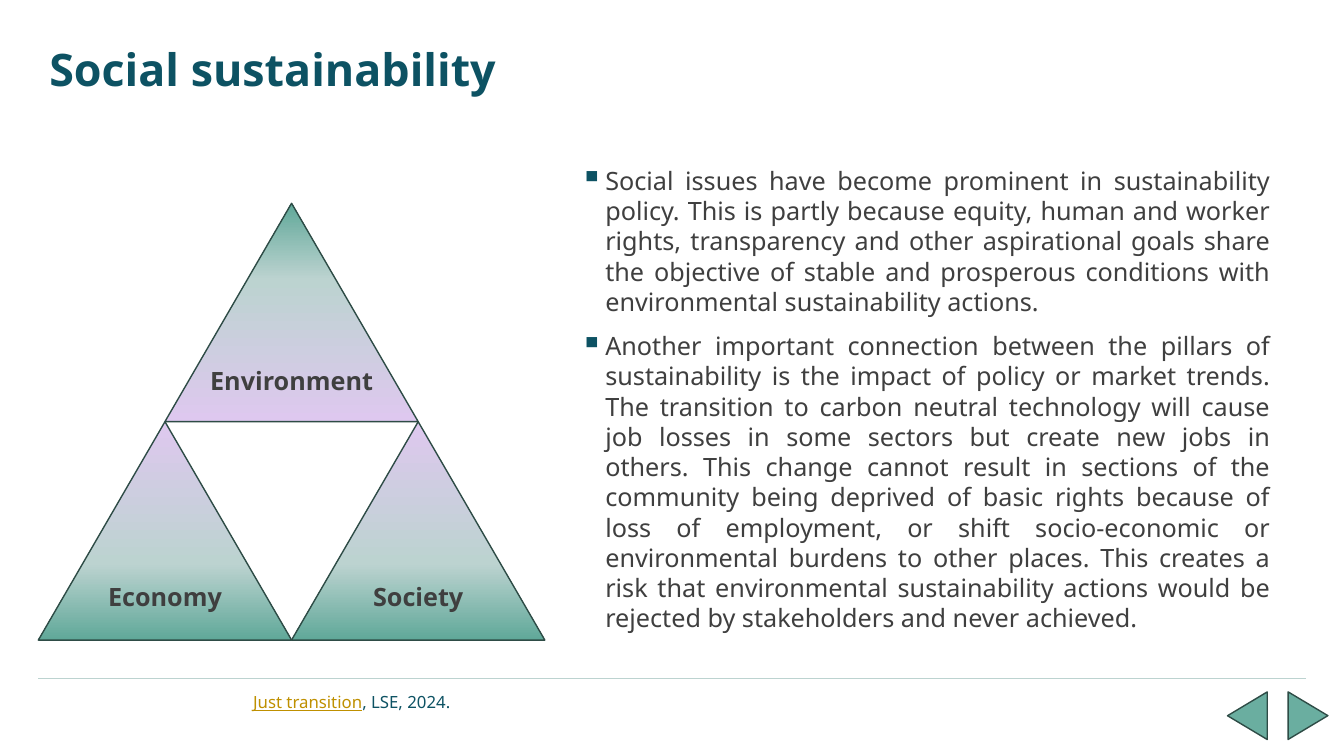
from copy import deepcopy

from lxml import etree
from pptx import Presentation
from pptx.dml.color import RGBColor
from pptx.enum.shapes import MSO_CONNECTOR, MSO_SHAPE
from pptx.enum.text import MSO_ANCHOR, MSO_AUTO_SIZE, PP_ALIGN
from pptx.oxml.ns import qn
from pptx.util import Pt

TRIANGLE = MSO_SHAPE.ISOSCELES_TRIANGLE
STRAIGHT = MSO_CONNECTOR.STRAIGHT
TOP = MSO_ANCHOR.TOP
NO_AUTOFIT = MSO_AUTO_SIZE.NONE
LEFT, CENTER, JUSTIFY = PP_ALIGN.LEFT, PP_ALIGN.CENTER, PP_ALIGN.JUSTIFY

FONT = "Noto Sans"
COLORS = {
    "heading": "0D5263",
    "body": "3F3F3F",
    "link": "BF9000",
    "rule": "BCD3D0",
    "outline": "2E4C46",
    "arrow": "6AAEA0",
}
PILLAR_STOPS = [(0, "DEC8EF"), (0.65, "BCD3D0"), (1, "60A899")]

POINTS = [
    "Social issues have become prominent in sustainability policy. This is partly "
    "because equity, human and worker rights, transparency and other aspirational "
    "goals share the objective of stable and prosperous conditions with "
    "environmental sustainability actions.",
    "Another important connection between the pillars of sustainability is the "
    "impact of policy or market trends. The transition to carbon neutral technology "
    "will cause job losses in some sectors but create new jobs in others. This "
    "change cannot result in sections of the community being deprived of basic "
    "rights because of loss of employment, or shift socio-economic or environmental "
    "burdens to other places. This creates a risk that environmental sustainability "
    "actions would be rejected by stakeholders and never achieved.",
]


def rgb(name):
    return RGBColor.from_string(COLORS[name])


class SlideBuilder:
    def __init__(self, slide):
        self.slide = slide
        self.shapes = slide.shapes

    def style(self, font, size, color, bold=False):
        font.name, font.size, font.bold = FONT, Pt(size), bold
        font.color.rgb = rgb(color)

    def title(self, text, left, top, width, height):
        heading = self.shapes.title
        heading.left, heading.top = Pt(left), Pt(top)
        heading.width, heading.height = Pt(width), Pt(height)
        frame = heading.text_frame
        frame.text = text
        frame.vertical_anchor, frame.auto_size = TOP, NO_AUTOFIT
        line = frame.paragraphs[0]
        line.alignment, line.line_spacing = LEFT, 0.95
        self.style(line.font, 32, "heading", bold=True)

    def frame(self, left, top, width, height):
        box = self.shapes.add_textbox(Pt(left), Pt(top), Pt(width), Pt(height))
        box.text_frame.word_wrap = True
        return box.text_frame

    def label(self, text, left, top, width, height):
        line = self.frame(left, top, width, height).paragraphs[0]
        line.text = text
        line.alignment = CENTER
        self.style(line.font, 18, "body", bold=True)

    def bullets(self, points, left, top, width, height):
        frame = self.frame(left, top, width, height)
        for index, point in enumerate(points):
            item = frame.paragraphs[0] if index == 0 else frame.add_paragraph()
            item.text = point
            item.alignment = JUSTIFY
            if index:
                item.space_before = Pt(10)
            self.add_bullet(item)
            self.style(item.font, 18, "body")

    def add_bullet(self, item):
        properties = item._p.get_or_add_pPr()
        properties.set("marL", str(Pt(18)))
        properties.set("indent", str(-Pt(18)))
        color = etree.SubElement(properties, qn("a:buClr"))
        etree.SubElement(color, qn("a:srgbClr"), val=COLORS["heading"])
        etree.SubElement(properties, qn("a:buSzPct"), val="125000")
        etree.SubElement(properties, qn("a:buChar"), char="▪")

    def citation(self, source, details, left, top, width, height):
        line = self.frame(left, top, width, height).paragraphs[0]
        for text, color in ((source, "link"), (details, "heading")):
            run = line.add_run()
            run.text = text
            self.style(run.font, 12, color)
            run.font.underline = color == "link"

    def triangle(self, left, top, width, height):
        shape = self.shapes.add_shape(TRIANGLE, Pt(left), Pt(top), Pt(width), Pt(height))
        shape.shadow.inherit = False
        shape.line.color.rgb = rgb("outline")
        shape.line.width = Pt(1)
        return shape

    def pillar(self, left, top, width, height, angle):
        """Draw a gradient triangle; angle runs counter-clockwise."""
        fill = self.triangle(left, top, width, height).fill
        fill.gradient()
        fill.gradient_angle = angle
        first = fill.gradient_stops[0]._gs
        first.addnext(deepcopy(first))
        for stop, (position, color) in zip(fill.gradient_stops, PILLAR_STOPS):
            stop.position = position
            stop.color.rgb = RGBColor.from_string(color)

    def arrow(self, left, top, width, height, rotation):
        shape = self.triangle(left, top, width, height)
        shape.rotation = rotation
        shape.fill.solid()
        shape.fill.fore_color.rgb = rgb("arrow")

    def rule(self, left, right, y):
        line = self.shapes.add_connector(STRAIGHT, Pt(left), Pt(y), Pt(right), Pt(y))
        line.line.color.rgb = rgb("rule")
        line.line.width = Pt(1.1)
        etree.SubElement(line._element.spPr, qn("a:effectLst"))


def main():
    deck = Presentation()
    deck.slide_width, deck.slide_height = Pt(960), Pt(540)
    page = SlideBuilder(deck.slides.add_slide(deck.slide_layouts[5]))

    page.rule(27.4, 932.6, 484.7)
    page.title("Social sustainability", 28, 28.8, 763, 84)
    page.bullets(POINTS, 407.3, 114.5, 507, 343)

    side, height = 180.9, 156
    left, top = 27.4, 145.2
    pillars = [
        ("Society", 1, 1, 270, 110.8),
        ("Economy", 0, 1, 270, 110.8),
        ("Environment", 0.5, 0, 90, 112.5),
    ]
    for name, column, row, angle, label_drop in pillars:
        x, y = left + column * side, top + row * height
        page.pillar(x, y, side, height, angle)
        page.label(name, x + 18, y + label_drop, side - 36, 28)

    for arrow_left, rotation in ((917.3, 90), (874, 270)):
        page.arrow(arrow_left, 497, 34, 28.4, rotation)
    page.citation("Just transition", ", LSE, 2024.", 173.7, 490.5, 765, 29)

    deck.save("out.pptx")


if __name__ == "__main__":
    main()
